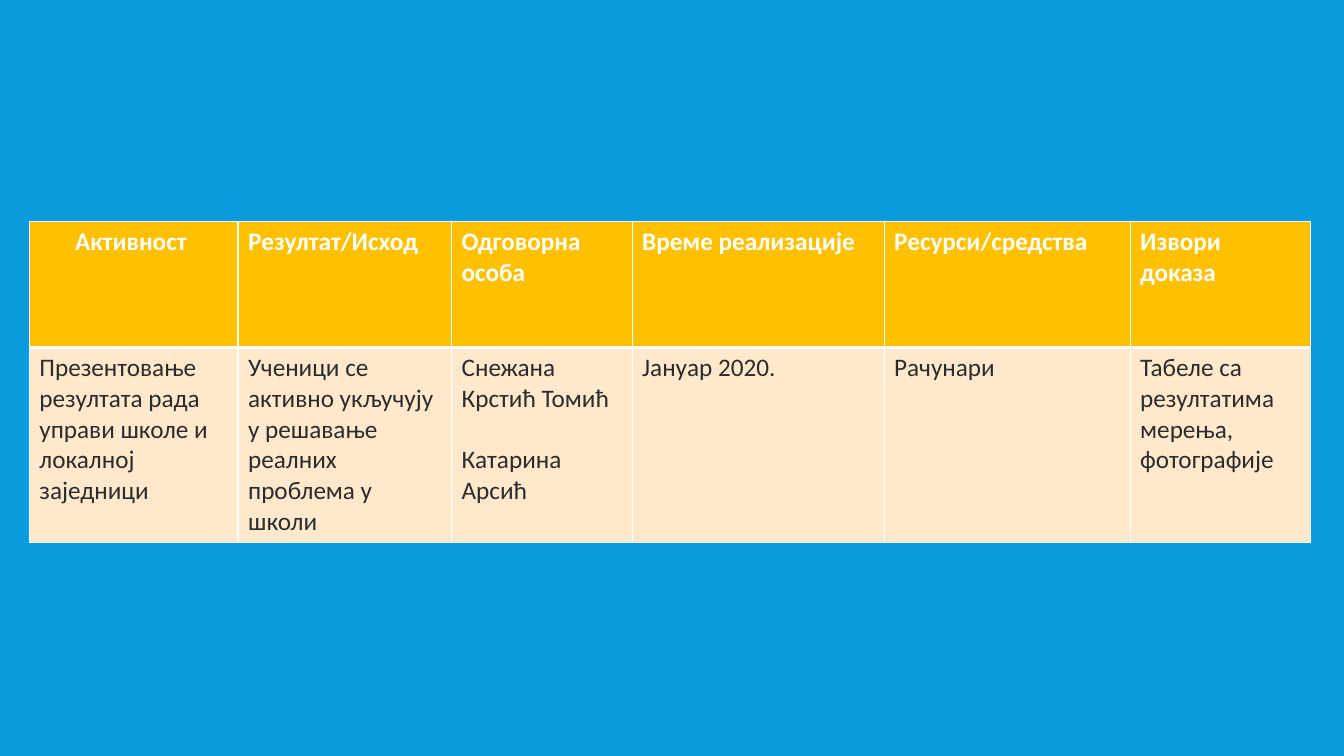
"""Builds a slide with a one-row activity plan table."""
from lxml import etree
from pptx import Presentation
from pptx.dml.color import RGBColor
from pptx.enum.text import PP_ALIGN
from pptx.oxml.ns import qn
from pptx.util import Cm, Pt

CENTER, LEFT = PP_ALIGN.CENTER, PP_ALIGN.LEFT

COLORS = {
    "background": "099BDD",
    "header": "FFC000",
    "body": "FFE8CC",
    "border": "FFFFFF",
    "header_text": "FFFFFF",
    "body_text": "2C2C2C",
}
FONT, TEXT_SIZE, NAME_GAP = "Calibri", Pt(18), Pt(22)
THIN, THICK = Pt(1), Pt(3)

PLAN = [
    ("Активност ", 5.26, ["Презентовање резултата рада управи школе и локалној заједници"]),
    ("Резултат/Исход", 5.38, ["Ученици се активно укључују у решавање реалних проблема у школи"]),
    ("Одговорна особа", 4.55, ["Снежана Крстић Томић", "Катарина Арсић"]),
    ("Време реализације", 6.35, ["Јануар 2020."]),
    ("Ресурси/средства", 6.2, ["Рачунари"]),
    ("Извори доказа", 4.55, ["Табеле са резултатима мерења, фотографије"]),
]
TABLE_LEFT, TABLE_TOP = 0.74, 5.58
ROW_HEIGHTS = (3.18, 4.83)


def set_borders(cell, top, bottom):
    properties = cell._tc.get_or_add_tcPr()
    for side, width in (("L", THIN), ("R", THIN), ("T", top), ("B", bottom)):
        line = etree.SubElement(properties, qn(f"a:ln{side}"), w=str(width))
        fill = etree.SubElement(line, qn("a:solidFill"))
        etree.SubElement(fill, qn("a:srgbClr"), val=COLORS["border"])


def fill_cell(cell, paragraphs, part, alignment=LEFT):
    is_header = part == "header"
    set_borders(cell, *((THIN, THICK) if is_header else (THICK, THIN)))
    cell.fill.solid()
    cell.fill.fore_color.rgb = RGBColor.from_string(COLORS[part])
    for index, text in enumerate(paragraphs):
        frame = cell.text_frame
        paragraph = frame.add_paragraph() if index else frame.paragraphs[0]
        paragraph.alignment = alignment
        if index:
            paragraph.space_before = NAME_GAP
        run = paragraph.add_run()
        run.text = text
        run.font.name, run.font.size, run.font.bold = FONT, TEXT_SIZE, is_header
        run.font.color.rgb = RGBColor.from_string(COLORS[f"{part}_text"])


def main():
    deck = Presentation()
    deck.slide_width, deck.slide_height = Cm(33.87), Cm(19.05)
    slide = deck.slides.add_slide(deck.slide_layouts[6])
    slide.background.fill.solid()
    slide.background.fill.fore_color.rgb = RGBColor.from_string(COLORS["background"])

    table_width = sum(width for _, width, _ in PLAN)
    plan_table = slide.shapes.add_table(
        len(ROW_HEIGHTS), len(PLAN), Cm(TABLE_LEFT), Cm(TABLE_TOP),
        Cm(table_width), Cm(sum(ROW_HEIGHTS)),
    ).table
    for row, height in zip(plan_table.rows, ROW_HEIGHTS):
        row.height = Cm(height)
    for column, (heading, width, details) in enumerate(PLAN):
        plan_table.columns[column].width = Cm(width)
        fill_cell(plan_table.cell(0, column), [heading], "header", LEFT if column else CENTER)
        fill_cell(plan_table.cell(1, column), details, "body")

    deck.save("out.pptx")


if __name__ == "__main__":
    main()
